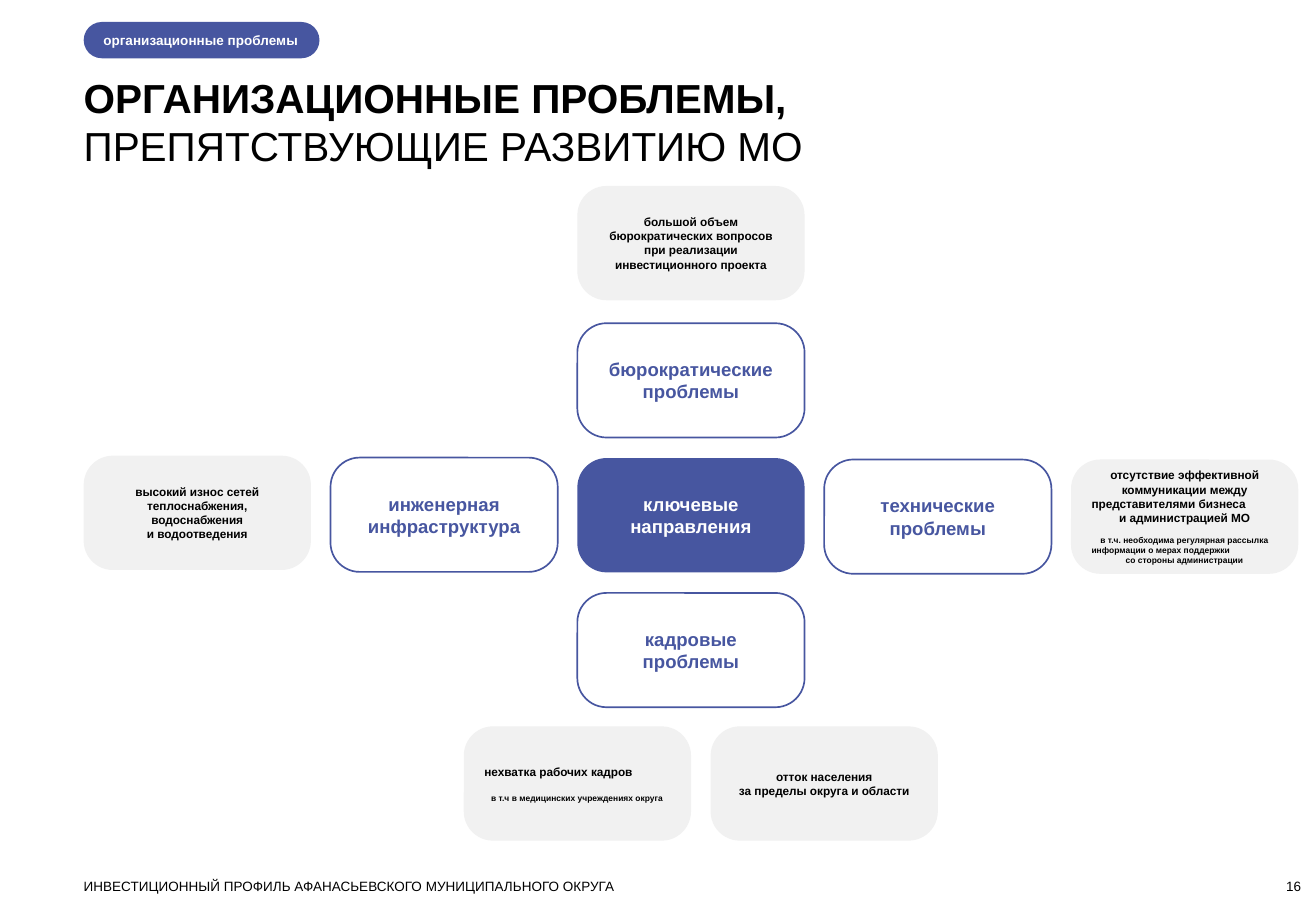
from pptx import Presentation
from pptx.dml.color import RGBColor
from pptx.enum.shapes import MSO_SHAPE as Preset
from pptx.enum.text import MSO_ANCHOR as Anchor, PP_ALIGN as Align
from pptx.util import Cm, Pt

COLORS = {"blue": "4756A0", "gray": "F1F1F1", "white": "FFFFFF", "black": "000000"}
LEFT, COLUMN_STEP = 1.75, 5.16
CARD_WIDTH, CARD_HEIGHT, CARD_ROUNDING = 4.75, 2.39, 0.256
DEFAULT_MARGINS = (0.25, 0.13, 0.25, 0.13)
NO_MARGINS = (0, 0, 0, 0)
CARD_STYLES = {
    "center": {"fill": "blue", "font": {"size": Pt(11), "bold": True, "color": "white"}},
    "direction": {"line": "blue", "font": {"size": Pt(11), "bold": True, "color": "blue"}},
    "problem": {"fill": "gray", "font": {"size": Pt(7), "bold": True, "color": "black"}},
}


class ProblemSlide:
    """Draws the text and rounded cards of one slide in a shared style."""

    def __init__(self, presentation):
        self.slide = presentation.slides.add_slide(presentation.slide_layouts[6])
        self.font_name = "Arial"

    def fill_text(self, shape, paragraphs, font, align, anchor, margins):
        frame = shape.text_frame
        sides = ("margin_left", "margin_top", "margin_right", "margin_bottom")
        frame_format = dict(zip(sides, map(Cm, margins)))
        frame_format.update(word_wrap=True, vertical_anchor=anchor)
        for name, value in frame_format.items():
            setattr(frame, name, value)
        for index, (text, changes) in enumerate(paragraphs):
            paragraph = frame.add_paragraph() if index else frame.paragraphs[0]
            run = paragraph.add_run()
            run.text = text
            values = {"name": self.font_name, "alignment": align, **font, **changes}
            run.font.color.rgb = RGBColor.from_string(COLORS[values.pop("color")])
            for name, value in values.items():
                target = paragraph if name in ("alignment", "space_before") else run.font
                setattr(target, name, value)

    def text(self, box, paragraphs, size, align=Align.LEFT, anchor=Anchor.TOP):
        shape = self.slide.shapes.add_textbox(*map(Cm, box))
        font = {"size": Pt(size), "color": "black"}
        self.fill_text(shape, paragraphs, font, align, anchor, NO_MARGINS)

    def rounded(self, box, rounding, paragraphs, font, fill=None, line=None,
                align=Align.CENTER, margins=DEFAULT_MARGINS):
        shape = self.slide.shapes.add_shape(Preset.ROUNDED_RECTANGLE, *map(Cm, box))
        shape.shadow.inherit = False
        shape.adjustments[0] = rounding
        if fill:
            shape.fill.solid()
            shape.fill.fore_color.rgb = RGBColor.from_string(COLORS[fill])
        else:
            shape.fill.background()
        if line:
            shape.line.color.rgb = RGBColor.from_string(COLORS[line])
            shape.line.width = Pt(1)
        else:
            shape.line.fill.background()
        self.fill_text(shape, paragraphs, font, align, Anchor.MIDDLE, margins)

    def card(self, column, top, style, *paragraphs):
        box = (LEFT + column * COLUMN_STEP, top, CARD_WIDTH, CARD_HEIGHT)
        self.rounded(box, CARD_ROUNDING, paragraphs, **CARD_STYLES[style])


def main():
    presentation = Presentation()
    presentation.slide_width, presentation.slide_height = Cm(27.51), Cm(19.05)
    slide = ProblemSlide(presentation)

    slide.text((LEFT, 1.52, 25.45, 2.06), [
        ("ОРГАНИЗАЦИОННЫЕ ПРОБЛЕМЫ,", {"bold": True}),
        ("ПРЕПЯТСТВУЮЩИЕ РАЗВИТИЮ МО", {}),
    ], 24)
    slide.rounded((LEFT, 0.46, 4.93, 0.76), 0.5, [("организационные проблемы", {})],
                  {"size": Pt(8), "bold": True, "color": "white"}, fill="blue",
                  align=Align.LEFT, margins=(0.3, 0, 0, 0))

    left = {"alignment": Align.LEFT}
    note = {"size": Pt(5)}
    cards = [
        (2, 3.89, "problem",
         ("большой объем бюрократических вопросов при реализации инвестиционного проекта", {})),
        (2, 6.76, "direction", ("бюрократические проблемы", {})),
        (0, 9.53, "problem",
         ("высокий износ сетей теплоснабжения, водоснабжения", {}),
         ("и водоотведения", {})),
        (1, 9.57, "direction", ("инженерная инфраструктура", {})),
        (2, 9.58, "center", ("ключевые направления", {})),
        (3, 9.61, "direction", ("технические проблемы", {})),
        (4, 9.61, "problem",
         ("отсутствие эффективной", {}),
         ("коммуникации между", {}),
         ("представителями бизнеса", left),
         ("и администрацией МО", {}),
         ("в т.ч. необходима регулярная рассылка", {**note, "space_before": Pt(6)}),
         ("информации о мерах поддержки", {**note, **left}),
         ("со стороны администрации", note)),
        (2, 12.4, "direction", ("кадровые проблемы", {})),
        (1.54, 15.19, "problem",
         ("нехватка рабочих кадров", left),
         ("в т.ч в медицинских учреждениях округа", {**note, "space_before": Pt(8.4)})),
        (2.54, 15.19, "problem",
         ("отток населения", {}),
         ("за пределы округа и области", {})),
    ]
    for card in cards:
        slide.card(*card)

    slide.text((LEFT, 18.36, 20.32, 0.33),
               [("ИНВЕСТИЦИОННЫЙ ПРОФИЛЬ АФАНАСЬЕВСКОГО МУНИЦИПАЛЬНОГО ОКРУГА", {})], 8)
    slide.text((25.17, 18.36, 2.03, 0.33), [("16", {})], 8, Align.RIGHT, Anchor.BOTTOM)
    presentation.save("out.pptx")


if __name__ == "__main__":
    main()
